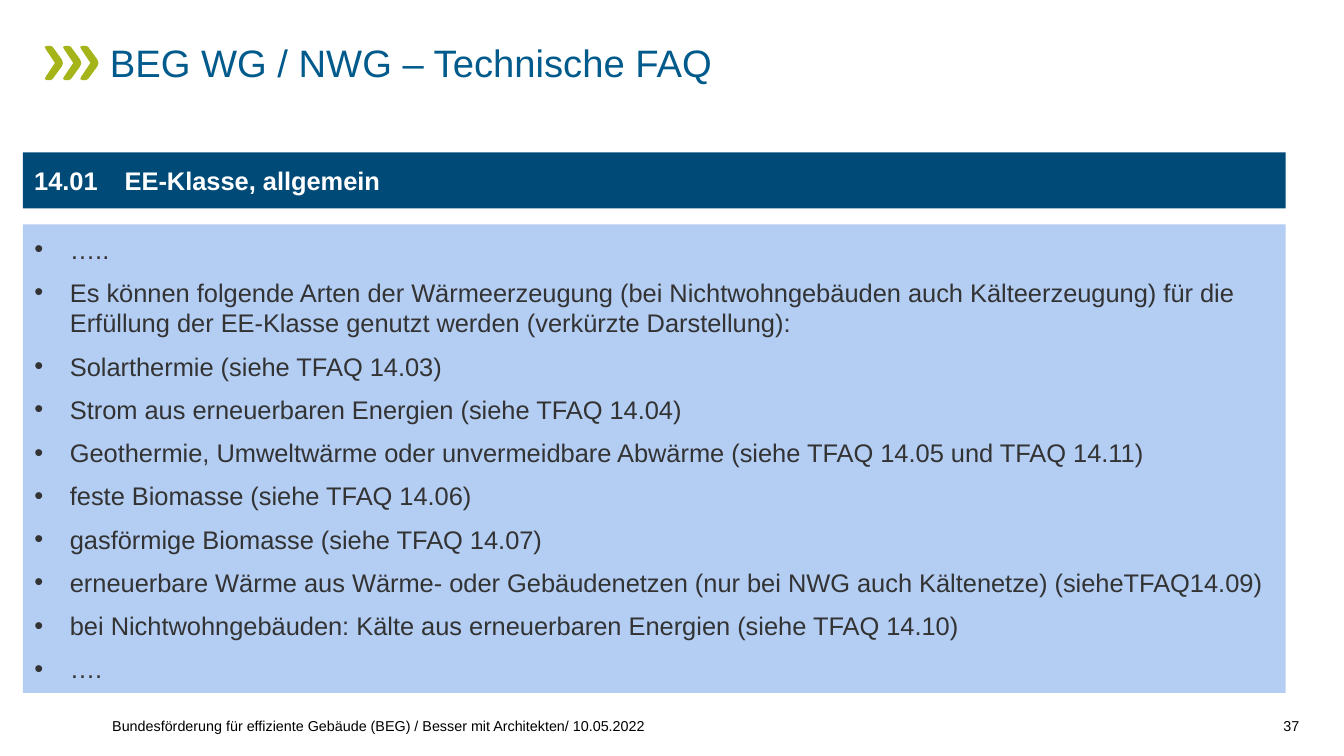
from dataclasses import dataclass

from lxml.etree import SubElement
from pptx import Presentation
from pptx.dml.color import RGBColor
from pptx.enum.shapes import MSO_SHAPE
from pptx.enum.text import MSO_ANCHOR, MSO_AUTO_SIZE, PP_ALIGN
from pptx.oxml.ns import qn
from pptx.shapes.autoshape import Shape
from pptx.slide import Slide
from pptx.text.text import TextFrame, _Paragraph as Paragraph
from pptx.util import Inches, Pt


@dataclass(frozen=True)
class Theme:
    font: str = "Arial"
    title: str = "005A8C"
    banner: str = "004A78"
    panel: str = "B3CDF3"
    chevron: str = "A4B419"
    body: str = "333333"
    white: str = "FFFFFF"
    black: str = "000000"
    title_size: int = 24
    body_size: int = 16
    footer_size: int = 9


@dataclass(frozen=True)
class Area:
    left: float
    top: float
    width: float
    height: float


@dataclass(frozen=True)
class FooterItem:
    text: str
    area: Area
    align: PP_ALIGN


THEME = Theme()
TITLE_AREA = Area(0.55, 0.37, 10.79, 0.41)
BANNER_AREA = Area(0.2, 1.33, 11.02, 0.49)
PANEL_AREA = Area(0.2, 1.96, 11.02, 4.09)
LIST_INDENT = 0.31
BANNER_TAB = 0.79
CHEVRON_LEFTS = (0.39, 0.55, 0.7)
CHEVRON_TOP, CHEVRON_HEIGHT = 0.4, 0.3
# Upper half of a chevron, clockwise from its inner notch
CHEVRON_HALF = ((0.09, 0.15), (0.01, 0.03), (0, 0.01), (0.02, 0),
                (0.05, 0), (0.07, 0.01), (0.15, 0.12), (0.16, 0.15))

ITEMS = (
    "…..",
    "Es können folgende Arten der Wärmeerzeugung (bei Nichtwohngebäuden auch Kälteerzeugung) "
    "für die Erfüllung der EE-Klasse genutzt werden (verkürzte Darstellung):",
    "Solarthermie (siehe TFAQ 14.03)",
    "Strom aus erneuerbaren Energien (siehe TFAQ 14.04)",
    "Geothermie, Umweltwärme oder unvermeidbare Abwärme (siehe TFAQ 14.05 und TFAQ 14.11)",
    "feste Biomasse (siehe TFAQ 14.06)",
    "gasförmige Biomasse (siehe TFAQ 14.07)",
    "erneuerbare Wärme aus Wärme- oder Gebäudenetzen (nur bei NWG auch Kältenetze) (sieheTFAQ14.09)",
    "bei Nichtwohngebäuden: Kälte aus erneuerbaren Energien (siehe TFAQ 14.10)",
    "….",
)
FOOTER = (
    FooterItem("Bundesförderung für effiziente Gebäude (BEG) / Besser mit Architekten/ 10.05.2022",
               Area(0.98, 6.13, 9.9, 0.28), PP_ALIGN.LEFT),
    FooterItem("37", Area(10.93, 6.13, 0.41, 0.28), PP_ALIGN.RIGHT),
)


def place(box: Shape, area: Area) -> None:
    box.left, box.top = Inches(area.left), Inches(area.top)
    box.width, box.height = Inches(area.width), Inches(area.height)


def paint(box: Shape, color: str) -> None:
    box.fill.solid()
    box.fill.fore_color.rgb = RGBColor.from_string(color)
    box.line.fill.background()


def prepare(frame: TextFrame, anchor: MSO_ANCHOR, inset: bool = True) -> None:
    frame.word_wrap = True
    frame.auto_size = MSO_AUTO_SIZE.NONE
    frame.vertical_anchor = anchor
    if not inset:
        frame.margin_left = frame.margin_right = frame.margin_top = frame.margin_bottom = 0


def indent(para: Paragraph, margin: float, first_line: float) -> None:
    properties = para._p.get_or_add_pPr()
    properties.set("marL", str(Inches(margin)))
    properties.set("indent", str(Inches(first_line)))


def add_span(para: Paragraph, text: str, size: int, color: str, bold: bool = False) -> None:
    span = para.add_run()
    span.text = text
    span.font.name = THEME.font
    span.font.size = Pt(size)
    span.font.bold = bold
    span.font.color.rgb = RGBColor.from_string(color)


def add_chevron(page: Slide, left: float) -> None:
    lower_half = [(x, CHEVRON_HEIGHT - y) for x, y in reversed(CHEVRON_HALF[1:-1])]
    points = [(Inches(left + x), Inches(CHEVRON_TOP + y)) for x, y in (*CHEVRON_HALF, *lower_half)]
    builder = page.shapes.build_freeform(*points[0])
    builder.add_line_segments(points[1:], close=True)
    chevron = builder.convert_to_shape()
    chevron.shadow.inherit = False
    paint(chevron, THEME.chevron)


def add_title(page: Slide, text: str) -> None:
    title = page.shapes.title
    place(title, TITLE_AREA)
    prepare(title.text_frame, MSO_ANCHOR.TOP, inset=False)
    para = title.text_frame.paragraphs[0]
    indent(para, 0, 0.41)
    para.alignment = PP_ALIGN.LEFT
    para.line_spacing = 0.95
    add_span(para, text, THEME.title_size, THEME.title)


def add_banner(page: Slide, number: str, heading: str) -> None:
    banner = page.shapes.add_shape(MSO_SHAPE.RECTANGLE, 0, 0, 0, 0)
    place(banner, BANNER_AREA)
    banner.shadow.inherit = False
    paint(banner, THEME.banner)
    prepare(banner.text_frame, MSO_ANCHOR.MIDDLE)
    para = banner.text_frame.paragraphs[0]
    tabs = SubElement(para._p.get_or_add_pPr(), qn("a:tabLst"))
    SubElement(tabs, qn("a:tab"), pos=str(Inches(BANNER_TAB)), algn="l")
    para.alignment = PP_ALIGN.LEFT
    add_span(para, f"{number}\t{heading}", THEME.body_size, THEME.white, bold=True)


def add_list(page: Slide, items: tuple[str, ...]) -> None:
    panel = page.placeholders[1]
    place(panel, PANEL_AREA)
    paint(panel, THEME.panel)
    frame = panel.text_frame
    prepare(frame, MSO_ANCHOR.MIDDLE)
    for index, item in enumerate(items):
        para = frame.add_paragraph() if index else frame.paragraphs[0]
        indent(para, LIST_INDENT, -LIST_INDENT)
        SubElement(para._p.get_or_add_pPr(), qn("a:buChar"), char="•")
        para.space_before = Pt(8 if index else 0)
        add_span(para, item, THEME.body_size, THEME.body)


def add_footer(page: Slide, item: FooterItem) -> None:
    box = page.shapes.add_textbox(0, 0, 0, 0)
    place(box, item.area)
    prepare(box.text_frame, MSO_ANCHOR.BOTTOM, inset=False)
    para = box.text_frame.paragraphs[0]
    para.alignment = item.align
    add_span(para, item.text, THEME.footer_size, THEME.black)


def main() -> None:
    deck = Presentation()
    deck.slide_width, deck.slide_height = Inches(11.73), Inches(6.6)
    page = deck.slides.add_slide(deck.slide_layouts[1])

    # Heading with chevrons
    for left in CHEVRON_LEFTS:
        add_chevron(page, left)
    add_title(page, "BEG WG / NWG – Technische FAQ")

    # Question and answer
    add_banner(page, "14.01", "EE-Klasse, allgemein")
    add_list(page, ITEMS)

    # Footer and page number
    for item in FOOTER:
        add_footer(page, item)

    deck.save("out.pptx")


if __name__ == "__main__":
    main()
